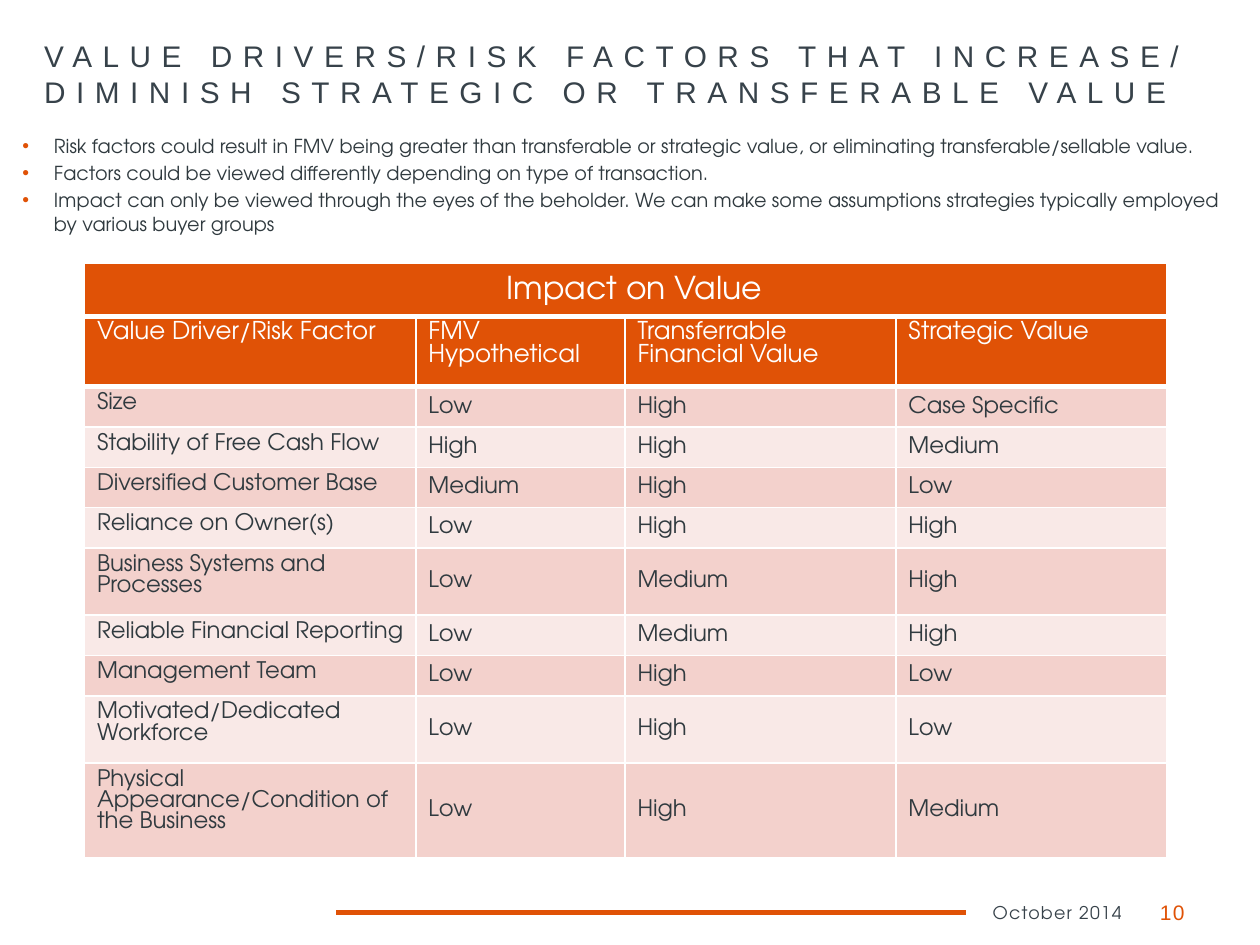
from lxml import etree
from pptx import Presentation
from pptx.dml.color import RGBColor
from pptx.enum import shapes, text
from pptx.oxml import ns
from pptx.util import Inches, Pt

ORANGE = RGBColor(0xE0, 0x52, 0x06)
SLATE = RGBColor(0x37, 0x42, 0x4A)
DARK = RGBColor(0x30, 0x3A, 0x3F)
WHITE = RGBColor(0xFF, 0xFF, 0xFF)
BANDS = (RGBColor(0xF3, 0xD1, 0xCC), RGBColor(0xF9, 0xE9, 0xE7))
HEADING_FONT = "Arial"
BODY_FONT = "TeX Gyre Adventor"

TITLE = ("VALUE DRIVERS/RISK FACTORS THAT INCREASE/ "
         "DIMINISH STRATEGIC OR TRANSFERABLE VALUE")
BULLETS = [
    "Risk factors could result in FMV being greater than transferable or "
    "strategic value, or eliminating transferable/sellable value.",
    "Factors could be viewed differently depending on type of transaction.",
    "Impact can only be viewed through the eyes of the beholder. We can make "
    "some assumptions strategies typically employed by various buyer groups",
]
IMPACT_ROWS = [
    ("Value Driver/Risk Factor", "FMV Hypothetical",
     "Transferrable Financial Value", "Strategic Value"),
    ("Size", "Low", "High", "Case Specific"),
    ("Stability of Free Cash Flow", "High", "High", "Medium"),
    ("Diversified Customer Base", "Medium", "High", "Low"),
    ("Reliance on Owner(s)", "Low", "High", "High"),
    ("Business Systems and Processes", "Low", "Medium", "High"),
    ("Reliable Financial Reporting", "Low", "Medium", "High"),
    ("Management Team", "Low", "High", "Low"),
    ("Motivated/Dedicated Workforce", "Low", "High", "Low"),
    ("Physical Appearance/Condition of the Business", "Low", "High", "Medium"),
]
COLUMN_WIDTHS = (2.63, 1.66, 2.15, 2.15)
ROW_HEIGHTS = (0.57, 0.32, 0.32, 0.32, 0.32, 0.53, 0.32, 0.32, 0.53, 0.74)


def format_paragraph(paragraph, size, color, font=BODY_FONT, tracking=0):
    for run in paragraph.runs:
        run.font.size = Pt(size)
        run.font.name = font
        run.font.color.rgb = color
        if tracking:
            run.font._element.set("spc", str(round(tracking * 100)))


def add_title(slide):
    title = slide.shapes.title
    title.left, title.top = Inches(0.25), Inches(0.25)
    title.width, title.height = Inches(9.33), Inches(0.75)
    frame = title.text_frame
    frame.text = TITLE
    frame.word_wrap = True
    frame.auto_size = text.MSO_AUTO_SIZE.NONE
    frame.vertical_anchor = text.MSO_ANCHOR.TOP
    paragraph = frame.paragraphs[0]
    paragraph.alignment = text.PP_ALIGN.LEFT
    format_paragraph(paragraph, 17, SLATE, HEADING_FONT, tracking=6)


def add_text(slide, left, top, width, height, words, size, color,
             font=BODY_FONT, tracking=0, align=text.PP_ALIGN.LEFT,
             anchor=text.MSO_ANCHOR.TOP):
    box = slide.shapes.add_textbox(Inches(left), Inches(top),
                                   Inches(width), Inches(height))
    frame = box.text_frame
    frame.word_wrap = True
    frame.vertical_anchor = anchor
    frame.text = words
    for paragraph in frame.paragraphs:
        paragraph.alignment = align
        format_paragraph(paragraph, size, color, font, tracking)
    return frame


def add_bullets(slide):
    frame = add_text(slide, 0.08, 1.02, 9.92, 0.9, "\n".join(BULLETS), 11, DARK)
    for index, paragraph in enumerate(frame.paragraphs):
        if index:
            paragraph.space_before = Pt(2.2)
        properties = paragraph._p.get_or_add_pPr()
        properties.set("marL", str(Inches(0.25)))
        properties.set("indent", str(-Inches(0.25)))
        color = etree.SubElement(properties, ns.qn("a:buClr"))
        etree.SubElement(color, ns.qn("a:srgbClr"), val=str(ORANGE))
        etree.SubElement(properties, ns.qn("a:buFont"), typeface=HEADING_FONT)
        etree.SubElement(properties, ns.qn("a:buChar"), char="•")


def style_cell(cell, fill, bottom_border=1):
    """Fill a cell and draw its white borders, which precede the fill in XML."""
    cell.fill.solid()
    cell.fill.fore_color.rgb = fill
    properties = cell._tc.get_or_add_tcPr()
    borders = (("a:lnL", 1), ("a:lnR", 1), ("a:lnT", 1), ("a:lnB", bottom_border))
    for position, (tag, width) in enumerate(borders):
        line = etree.Element(ns.qn(tag), w=str(Pt(width)))
        solid = etree.SubElement(line, ns.qn("a:solidFill"))
        etree.SubElement(solid, ns.qn("a:srgbClr"), val=str(WHITE))
        properties.insert(position, line)


def add_table(slide, top, column_widths, row_heights):
    shape = slide.shapes.add_table(
        len(row_heights), len(column_widths), Inches(0.67), Inches(top),
        Inches(sum(column_widths)), Inches(sum(row_heights)))
    table = shape.table
    table.first_row = table.horz_banding = False
    for column, width in zip(table.columns, column_widths):
        column.width = Inches(width)
    for row, height in zip(table.rows, row_heights):
        row.height = Inches(height)
    return table


def add_impact_table(slide):
    table = add_table(slide, 2.5, COLUMN_WIDTHS, ROW_HEIGHTS)
    for row, values in enumerate(IMPACT_ROWS):
        header = row == 0
        for column, value in enumerate(values):
            cell = table.cell(row, column)
            cell.text = value
            paragraph = cell.text_frame.paragraphs[0]
            if header:
                format_paragraph(paragraph, 14, WHITE)
                style_cell(cell, ORANGE, bottom_border=3)
            else:
                format_paragraph(paragraph, 13, DARK)
                style_cell(cell, BANDS[(row - 1) % 2])
                if column:
                    cell.vertical_anchor = text.MSO_ANCHOR.MIDDLE


def add_banner(slide):
    banner = add_table(slide, 2.09, (sum(COLUMN_WIDTHS),), (0.42,))
    style_cell(banner.cell(0, 0), ORANGE, bottom_border=3)
    add_text(slide, 3.92, 2.08, 3.92, 0.4, "Impact on Value", 18, WHITE)


def add_footer(slide):
    rule = slide.shapes.add_connector(
        shapes.MSO_CONNECTOR.STRAIGHT,
        Inches(2.67), Inches(7.24), Inches(7.67), Inches(7.24))
    rule.line.color.rgb = ORANGE
    rule.line.width = Pt(3)
    etree.SubElement(rule._element.spPr, ns.qn("a:effectLst"))
    placement = dict(tracking=0.7, align=text.PP_ALIGN.RIGHT,
                     anchor=text.MSO_ANCHOR.MIDDLE)
    add_text(slide, 6.67, 7.04, 2.33, 0.4, "October 2014", 10, SLATE, **placement)
    add_text(slide, 9, 7.04, 0.5, 0.4, "10", 12, ORANGE, HEADING_FONT, **placement)


def main():
    presentation = Presentation()
    presentation.slide_width = Inches(10)
    presentation.slide_height = Inches(7.5)
    slide = presentation.slides.add_slide(presentation.slide_layouts[5])
    # Heading and introduction
    add_title(slide)
    add_bullets(slide)
    # Table with its banner
    add_impact_table(slide)
    add_banner(slide)
    # Rule, date and page number
    add_footer(slide)
    presentation.save("out.pptx")


if __name__ == "__main__":
    main()
